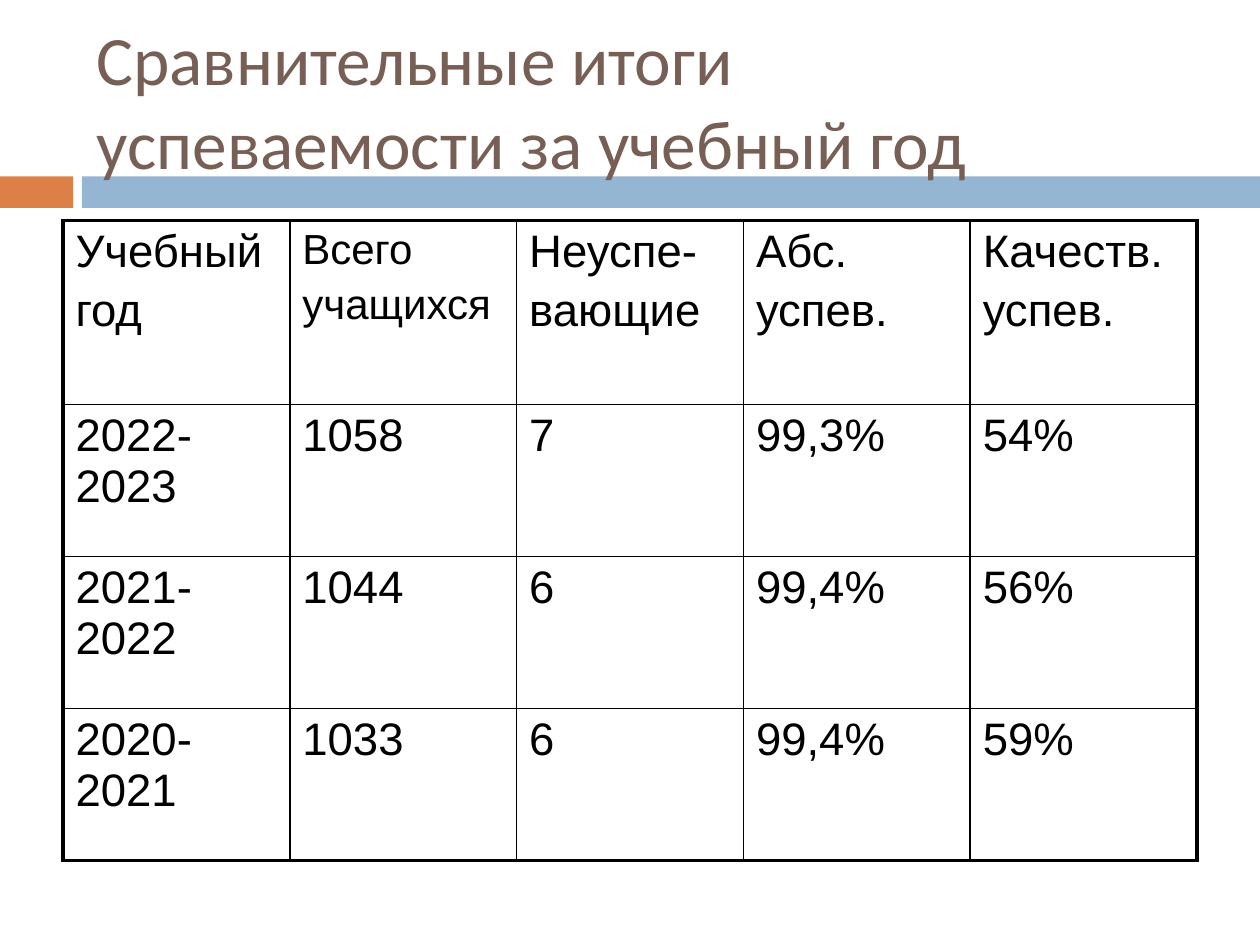
from typing import NamedTuple

from lxml.etree import SubElement
from pptx import Presentation
from pptx.dml.color import RGBColor
from pptx.enum.shapes import MSO_SHAPE as Shape
from pptx.enum.text import MSO_ANCHOR as Anchor
from pptx.oxml.ns import qn
from pptx.util import Pt


class Bar(NamedTuple):
    left: float
    width: float
    color: str


class Column(NamedTuple):
    header: str
    values: list[str]
    header_size: float = 26


BLACK = "000000"
BODY_SIZE = 26
OUTER, INNER = 2.25, 1
BARS = [Bar(0, 41.76, "DD8047"), Bar(46.8, 673.2, "94B6D2")]
COLUMNS = [
    Column("Учебный\nгод", ["2022-2023", "2021-2022", "2020-2021"]),
    Column("Всего\nучащихся", ["1058", "1044", "1033"], 24),
    Column("Неуспе-\nвающие", ["7", "6", "6"]),
    Column("Абс.\nуспев.", ["99,3%", "99,4%", "99,4%"]),
    Column("Качеств.\nуспев.", ["54%", "56%", "59%"]),
]
ROW_HEIGHTS = [105.12, 86.88, 86.88, 86.88]


def rgb(color: str) -> RGBColor:
    return RGBColor.from_string(color)


def style(p, font: str, size: float, color: str) -> None:
    for r in p.runs:
        r.font.name, r.font.size = font, Pt(size)
        r.font.color.rgb = rgb(color)


def add_bar(s, bar: Bar) -> None:
    sp = s.shapes.add_shape(Shape.RECTANGLE, Pt(bar.left), Pt(100.8), Pt(bar.width), Pt(18))
    sp.shadow.inherit = False
    sp.fill.solid()
    sp.fill.fore_color.rgb = rgb(bar.color)
    sp.line.fill.background()


def add_title(s, text: str) -> None:
    sp = s.shapes.add_textbox(Pt(48), Pt(18), Pt(642), Pt(78))
    tf = sp.text_frame
    tf.word_wrap = True
    tf.vertical_anchor = Anchor.MIDDLE
    tf.text = text
    style(tf.paragraphs[0], "Calibri", 39.6, "775F55")


def set_borders(cell, widths: dict[str, float]) -> None:
    props = cell._tc.get_or_add_tcPr()
    for index, (side, width) in enumerate(widths.items()):
        line = props.makeelement(qn(f"a:ln{side}"), {"w": str(Pt(width))})
        fill = SubElement(line, qn("a:solidFill"))
        SubElement(fill, qn("a:srgbClr"), val=BLACK)
        props.insert(index, line)


def fill_cell(cell, text: str, size: float) -> None:
    cell.fill.background()
    cell.text = text
    for p in cell.text_frame.paragraphs:
        p.space_before = Pt(4.5)
        style(p, "Arial", size, BLACK)


def add_results(s, columns: list[Column]) -> None:
    n_rows, n_cols = len(ROW_HEIGHTS), len(columns)
    table = s.shapes.add_table(n_rows, n_cols, Pt(36), Pt(126), Pt(648), Pt(sum(ROW_HEIGHTS))).table
    table.first_row = table.horz_banding = False
    for row, height in zip(table.rows, ROW_HEIGHTS):
        row.height = Pt(height)
    for c, column in enumerate(columns):
        table.columns[c].width = Pt(648 / n_cols)
        for r, text in enumerate([column.header, *column.values]):
            cell = table.cell(r, c)
            fill_cell(cell, text, BODY_SIZE if r else column.header_size)
            # Heavy frame outside, thin rules inside
            edges = {"L": c == 0, "R": c == n_cols - 1, "T": r == 0, "B": r == n_rows - 1}
            set_borders(cell, {side: OUTER if edge else INNER for side, edge in edges.items()})


def main() -> None:
    prs = Presentation()
    prs.slide_width, prs.slide_height = Pt(720), Pt(540)
    s = prs.slides.add_slide(prs.slide_layouts[6])

    # Band under the title
    for bar in BARS:
        add_bar(s, bar)

    # Title and yearly results
    add_title(s, "Сравнительные итоги \vуспеваемости за учебный год")
    add_results(s, COLUMNS)

    prs.save("out.pptx")


if __name__ == "__main__":
    main()
